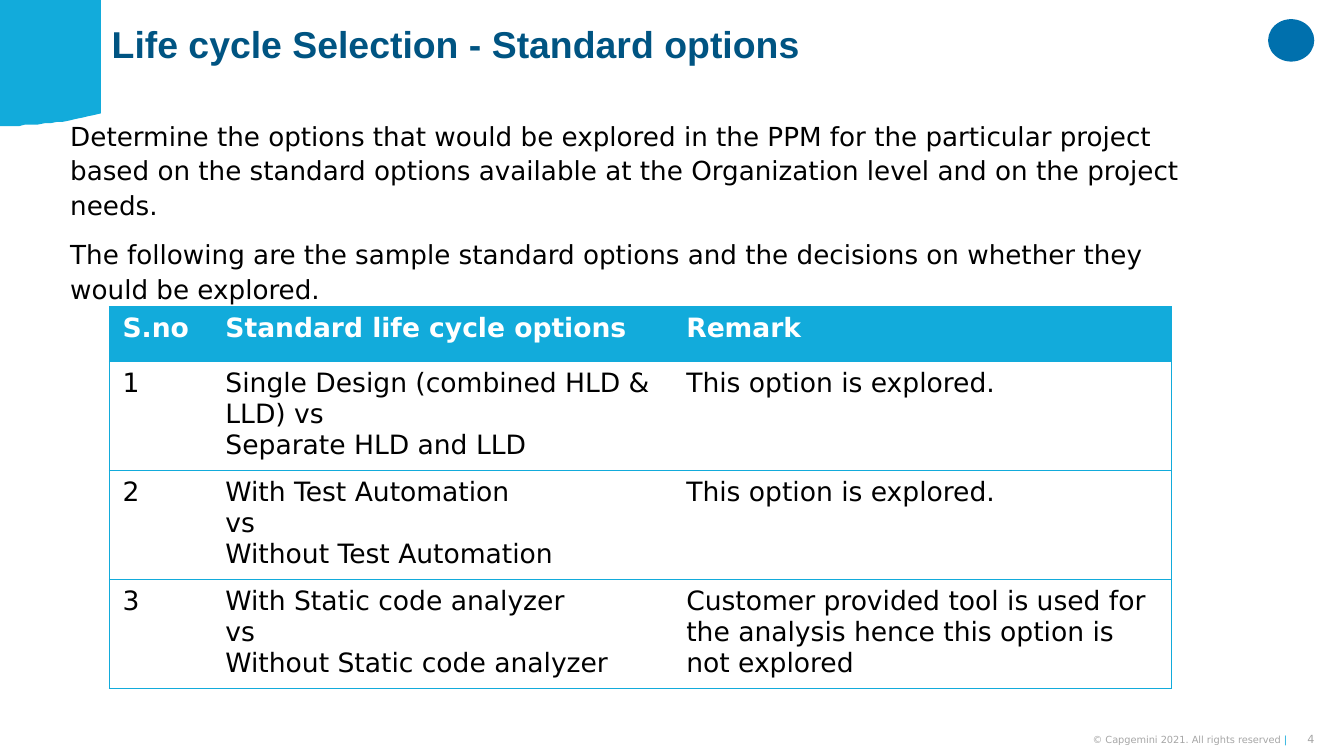
import pptx
import pptx.dml.color
import pptx.enum.shapes
import pptx.enum.text
import pptx.oxml
import pptx.oxml.ns
import pptx.util

Pt = pptx.util.Pt


class Theme:
    blue = "12ABDB"
    navy = "005482"
    mark = "0070AD"
    grey = "A6A6A6"
    black = "000000"
    white = "FFFFFF"
    heading_font = "Arial"
    body_font = "DejaVu Sans"
    title_size = 26.7
    body_size = 18.7
    table_size = 19
    number_size = 8
    footer_size = 7
    border_width = 0.5


def rgb(value):
    return pptx.dml.color.RGBColor.from_string(value)


class SlideBuilder:
    def __init__(self, presentation, theme):
        self.theme = theme
        self.slide = presentation.slides.add_slide(presentation.slide_layouts[6])

    def format_run(self, run, size, color, bold=False, name=None):
        run.font.name = name or self.theme.body_font
        run.font.size = Pt(size)
        run.font.bold = bold
        run.font.color.rgb = rgb(color)

    def paint(self, shape, color):
        shape.shadow.inherit = False
        shape.fill.solid()
        shape.fill.fore_color.rgb = rgb(color)
        shape.line.fill.background()

    def outline(self, points, color):
        builder = self.slide.shapes.build_freeform(*points[0], scale=Pt(1))
        builder.add_line_segments(points[1:], close=True)
        self.paint(builder.convert_to_shape(), color)

    def oval(self, box, color):
        kind = pptx.enum.shapes.MSO_SHAPE.OVAL
        self.paint(self.slide.shapes.add_shape(kind, *map(Pt, box)), color)

    def text(self, box, text, size, color, bold=False, name=None, spacing=1.0,
             after=0, indent=0):
        frame = self.slide.shapes.add_textbox(*map(Pt, box)).text_frame
        frame.word_wrap = True
        frame.text = text
        for paragraph in frame.paragraphs:
            paragraph.line_spacing = spacing
            paragraph.space_after = Pt(after)
            if indent:
                properties = paragraph._p.get_or_add_pPr()
                properties.set("marL", str(Pt(indent)))
                properties.set("indent", "0")
            for run in paragraph.runs:
                self.format_run(run, size, color, bold, name)
        return frame

    def footer(self, box, text, size):
        frame = self.text(box, text, size, self.theme.grey)
        frame.margin_left = frame.margin_right = 0
        frame.margin_top = frame.margin_bottom = 0
        frame.vertical_anchor = pptx.enum.text.MSO_ANCHOR.MIDDLE
        frame.paragraphs[0].alignment = pptx.enum.text.PP_ALIGN.RIGHT
        return frame.paragraphs[0]

    def borders(self, cell, visible):
        properties = cell._tc.get_or_add_tcPr()
        for side in "LRTB":
            if side in visible:
                fill = f'<a:solidFill><a:srgbClr val="{self.theme.blue}"/></a:solidFill>'
            else:
                fill = "<a:noFill/>"
            properties.append(pptx.oxml.parse_xml(
                f'<a:ln{side} {pptx.oxml.ns.nsdecls("a")} '
                f'w="{Pt(self.theme.border_width)}">{fill}</a:ln{side}>'))

    def table(self, left, top, widths, heights, rows):
        frame = self.slide.shapes.add_table(
            len(rows), len(widths), Pt(left), Pt(top), Pt(sum(widths)), Pt(sum(heights)))
        table = frame.table
        for column, width in zip(table.columns, widths):
            column.width = Pt(width)
        for row, height in zip(table.rows, heights):
            row.height = Pt(height)
        last = len(widths) - 1
        for row_index, row in enumerate(rows):
            header = row_index == 0
            color = self.theme.white if header else self.theme.black
            for column_index, text in enumerate(row):
                cell = table.cell(row_index, column_index)
                cell.margin_left = cell.margin_right = Pt(9.6)
                cell.margin_top = cell.margin_bottom = Pt(4.8)
                # Horizontal rules everywhere, vertical rules only outside
                edges = {0: "L", last: "R"}.get(column_index, "")
                self.borders(cell, "TB" + edges)
                if header:
                    cell.fill.solid()
                    cell.fill.fore_color.rgb = rgb(self.theme.blue)
                else:
                    cell.fill.background()
                cell.text_frame.text = text
                for paragraph in cell.text_frame.paragraphs:
                    for run in paragraph.runs:
                        self.format_run(run, self.theme.table_size, color, header)


def main():
    presentation = pptx.Presentation()
    presentation.slide_width = Pt(960)
    presentation.slide_height = Pt(540)
    theme = Theme()
    builder = SlideBuilder(presentation, theme)

    # Corner block with a curved lower edge
    width, height, rise, steps = 72.5, 90, 8.8, 16
    curve = [(round(width * i / steps, 2), round(height - rise * (i / steps) ** 2, 2))
             for i in range(steps + 1)]
    builder.outline([(width, 0), (0, 0)] + curve, theme.blue)

    # Plain mark at the top right
    builder.oval((905.8, 13.7, 33, 30.3), theme.mark)

    # Title and introduction
    builder.text((72.7, 15.1, 885, 35.3), "Life cycle Selection - Standard options",
                 theme.title_size, theme.navy, True, theme.heading_font, 0.9)
    builder.text(
        (26.6, 79.9, 838.8, 140.4),
        "Determine the options that would be explored in the PPM for the particular project "
        "based on the standard options available at the Organization level and on the "
        "project needs.\n"
        "The following are the sample standard options and the decisions on whether they "
        "would be explored.",
        theme.body_size, theme.black, spacing=1.1, after=10.7, indent=16.5)

    # Options table
    explored = "This option is explored."
    builder.table(78, 219, (73.5, 329.2, 356), (39, 78, 78, 78), [
        ("S.no", "Standard life cycle options", "Remark"),
        ("1", "Single Design (combined HLD & LLD) vs\nSeparate HLD and LLD", explored),
        ("2", "With Test Automation\nvs\nWithout Test Automation", explored),
        ("3", "With Static code analyzer\nvs\nWithout Static code analyzer",
         "Customer provided tool is used for the analysis hence this option is not explored"),
    ])

    # Footer
    copyright_line = builder.footer(
        (709.9, 523.4, 209.5, 9.4), "© Capgemini 2021. All rights reserved ",
        theme.footer_size)
    divider = copyright_line.add_run()
    divider.text = "|"
    builder.format_run(divider, theme.footer_size, theme.blue)
    builder.footer((925.2, 523.4, 13.7, 9.4), "4", theme.number_size)

    presentation.save("out.pptx")


if __name__ == "__main__":
    main()
